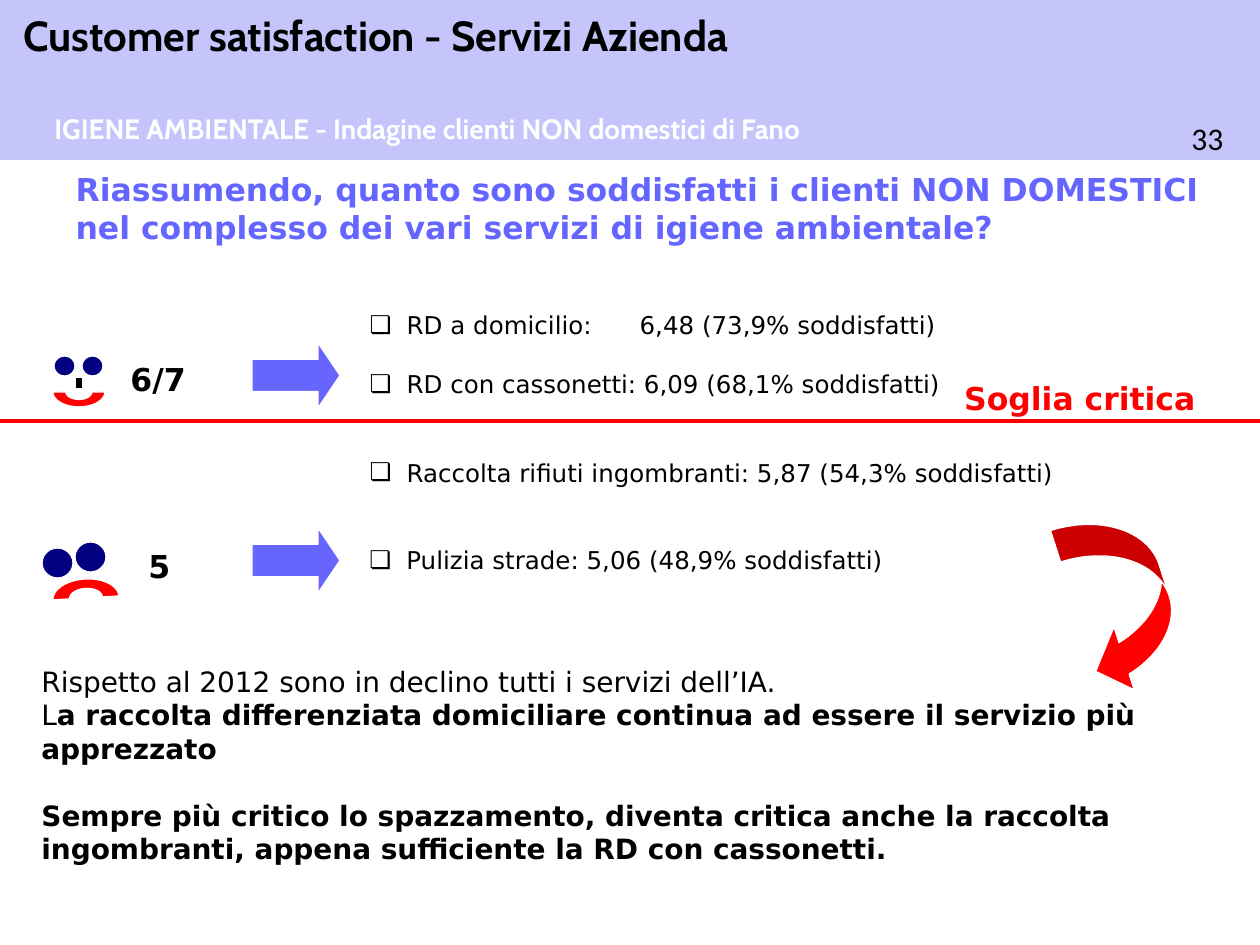
from dataclasses import dataclass
from math import cos, pi, sin
from typing import NamedTuple

from lxml.etree import SubElement
from pptx import Presentation
from pptx.dml.color import RGBColor
from pptx.enum.shapes import MSO_CONNECTOR as Connector, MSO_SHAPE as Shape
from pptx.enum.text import MSO_ANCHOR as Anchor, MSO_AUTO_SIZE as AutoSize, PP_ALIGN as Align
from pptx.oxml.ns import qn
from pptx.util import Emu, Pt

SCALE = 914400 / 126
BLACK, WHITE, RED, NAVY, VIOLET = "000000", "FFFFFF", "FF0000", "000080", "6565FF"
BULLET_INDENT, VALUE_TAB = 37, 270


class Area(NamedTuple):
    """Left, top, width and height in px."""
    left: int
    top: int
    width: int
    height: int


class Span(NamedTuple):
    """A stretch of text of one weight."""
    text: str
    bold: bool = False


@dataclass
class Para:
    """A paragraph with the space before it in points."""
    spans: list[Span]
    before: float = 0
    bullet: bool = False


@dataclass
class TextStyle:
    """The look of a block of text."""
    size: int
    color: str = BLACK
    font: str = "DejaVu Sans"
    align: Align = Align.LEFT
    wrap: bool = True


@dataclass
class Label:
    """A one-paragraph bold or plain text box."""
    text: str
    area: Area
    style: TextStyle
    bold: bool = True


@dataclass
class Mouth:
    """Half a ring: centre, radii, direction (1 smiles, -1 frowns) and tilt."""
    x: int
    y: int
    across: int
    down: int
    direction: int
    tilt: float = 0


def px(length: float) -> Emu:
    """Turn px into EMU."""
    return Emu(round(length * SCALE))


def rgb(color: str) -> RGBColor:
    """Turn a hex string into a colour."""
    return RGBColor.from_string(color)


def apply(target, values: dict) -> None:
    """Set attributes from a dict of format values."""
    for name, value in values.items():
        setattr(target, name, value)


def add_bullet(para) -> None:
    """Give a paragraph a box bullet, a hanging indent and a tab stop."""
    props = para._p.get_or_add_pPr()
    props.set("marL", str(px(BULLET_INDENT)))
    props.set("indent", str(-px(BULLET_INDENT)))
    SubElement(props, qn("a:buFont"), typeface="DejaVu Sans")
    SubElement(props, qn("a:buChar"), char="❏")
    tabs = SubElement(props, qn("a:tabLst"))
    SubElement(tabs, qn("a:tab"), pos=str(px(VALUE_TAB)), algn="l")


def write(box, area: Area, paras: list[Para], style: TextStyle) -> None:
    """Place a text box or placeholder and fill it with paragraphs."""
    apply(box, {name: px(value) for name, value in area._asdict().items()})
    frame = box.text_frame
    apply(frame, {"word_wrap": style.wrap, "auto_size": AutoSize.NONE,
                  "vertical_anchor": Anchor.TOP})
    for index, item in enumerate(paras):
        para = frame.add_paragraph() if index else frame.paragraphs[0]
        apply(para, {"alignment": style.align, "space_before": Pt(item.before)})
        if item.bullet:
            add_bullet(para)
        for span in item.spans:
            run = para.add_run()
            run.text = span.text
            apply(run.font, {"name": style.font, "size": Pt(style.size), "bold": span.bold})
            run.font.color.rgb = rgb(style.color)


def add_text(page, area: Area, paras: list[Para], style: TextStyle) -> None:
    """Add a text box."""
    write(page.shapes.add_textbox(0, 0, 0, 0), area, paras, style)


def paint(shape, fill: str, line: str = WHITE) -> None:
    """Set fill and thin outline, without shadow."""
    shape.shadow.inherit = False
    shape.fill.solid()
    shape.fill.fore_color.rgb = rgb(fill)
    shape.line.color.rgb = rgb(line)
    shape.line.width = Pt(0.75)


def add_preset(page, kind: Shape, area: Area, fill: str, adjustments=(), rotation: float = 0):
    """Add a painted preset shape."""
    shape = page.shapes.add_shape(kind, *map(px, area))
    for index, value in enumerate(adjustments):
        shape.adjustments[index] = value
    shape.rotation = rotation
    paint(shape, fill)
    return shape


def add_mouth(page, mouth: Mouth) -> None:
    """Add a half ring whose inner radii are half the outer ones."""
    steps = [pi * step / 24 for step in range(25)]
    ring = [(1, angle) for angle in steps] + [(0.5, angle) for angle in reversed(steps)]
    points = []
    for ratio, angle in ring:
        x = ratio * mouth.across * cos(angle)
        y = ratio * mouth.down * sin(angle) * mouth.direction
        points.append((px(mouth.x + x * cos(mouth.tilt) - y * sin(mouth.tilt)),
                       px(mouth.y + x * sin(mouth.tilt) + y * cos(mouth.tilt))))
    builder = page.shapes.build_freeform(*points[0], scale=1.0)
    builder.add_line_segments(points[1:], close=True)
    paint(builder.convert_to_shape(), RED)


def add_line(page, start: tuple[int, int], end: tuple[int, int], color: str, width: float) -> None:
    """Add a straight line without shadow."""
    line = page.shapes.add_connector(Connector.STRAIGHT, *map(px, start + end))
    line.line.color.rgb = rgb(color)
    line.line.width = Pt(width)
    SubElement(line._element.spPr, qn("a:effectLst"))


def main() -> None:
    """Build the slide."""
    deck = Presentation()
    apply(deck, {"slide_width": px(1260), "slide_height": px(945)})
    page = deck.slides.add_slide(deck.slide_layouts[1])
    title, body = page.placeholders

    band = add_preset(page, Shape.RECTANGLE, Area(0, 0, 1260, 160), "C5C5FC")
    band.line.fill.background()

    question = ("Riassumendo, quanto sono soddisfatti i clienti NON DOMESTICI "
                "nel complesso dei vari servizi di igiene ambientale?")
    write(title, Area(63, 164, 1176, 88), [Para([Span(question, True)])], TextStyle(18, VIOLET))

    ratings = [Para([Span(text)], before, True) for text, before in (
        ("RD a domicilio:\t6,48 (73,9% soddisfatti)", 0),
        ("RD con cassonetti: 6,09 (68,1% soddisfatti)", 17),
        ("Raccolta rifiuti ingombranti: 5,87 (54,3% soddisfatti)", 33.5))]
    write(body, Area(357, 304, 756, 190), ratings, TextStyle(14))
    add_text(page, Area(357, 539, 670, 42),
             [Para([Span("Pulizia strade: 5,06 (48,9% soddisfatti)")], bullet=True)], TextStyle(14))

    score = TextStyle(18)
    for label in (
        Label("Customer satisfaction - Servizi Azienda", Area(11, 3, 1134, 63),
              TextStyle(24, font="Cabin")),
        Label("IGIENE AMBIENTALE - Indagine clienti NON domestici di Fano",
              Area(42, 105, 818, 47), TextStyle(16, WHITE, "Cabin", wrap=False)),
        Label("33", Area(1179, 113, 81, 50), TextStyle(18, font="Calibri"), False),
        Label("Soglia critica", Area(746, 373, 462, 50), TextStyle(18, RED, align=Align.RIGHT)),
        Label("6/7", Area(118, 354, 118, 50), score),
        Label("5", Area(136, 541, 118, 50), score),
    ):
        add_text(page, label.area, [Para([Span(label.text, label.bold)])], label.style)

    add_text(page, Area(29, 658, 1176, 217), [
        Para([Span("Rispetto al 2012 sono in declino tutti i servizi dell’IA.")]),
        Para([Span("L"), Span("a raccolta differenziata domiciliare continua ad essere "
                              "il servizio più apprezzato", True)]),
        Para([Span("Sempre più critico lo spazzamento, diventa critica anche la raccolta "
                   "ingombranti, appena sufficiente la RD con cassonetti.", True)], 19),
    ], TextStyle(16))

    add_line(page, (0, 421), (1260, 421), RED, 2.25)
    for top in (343, 528):
        add_preset(page, Shape.RIGHT_ARROW, Area(252, top, 88, 65), "6666FF", (0.5, 0.336))
    add_preset(page, Shape.CURVED_LEFT_ARROW, Area(1076, 512, 93, 181), RED,
               (0.356, 0.712, 0.333), 342.2)

    for eye in (Area(54, 356, 21, 20), Area(82, 356, 21, 20),
                Area(42, 548, 31, 30), Area(75, 542, 31, 30)):
        add_preset(page, Shape.OVAL, eye, NAVY)
    for mouth in (Mouth(79, 392, 26, 15, 1), Mouth(86, 598, 33, 19, -1, -0.06)):
        add_mouth(page, mouth)
    add_line(page, (79, 378), (79, 388), BLACK, 3)
    deck.save("out.pptx")


if __name__ == "__main__":
    main()
